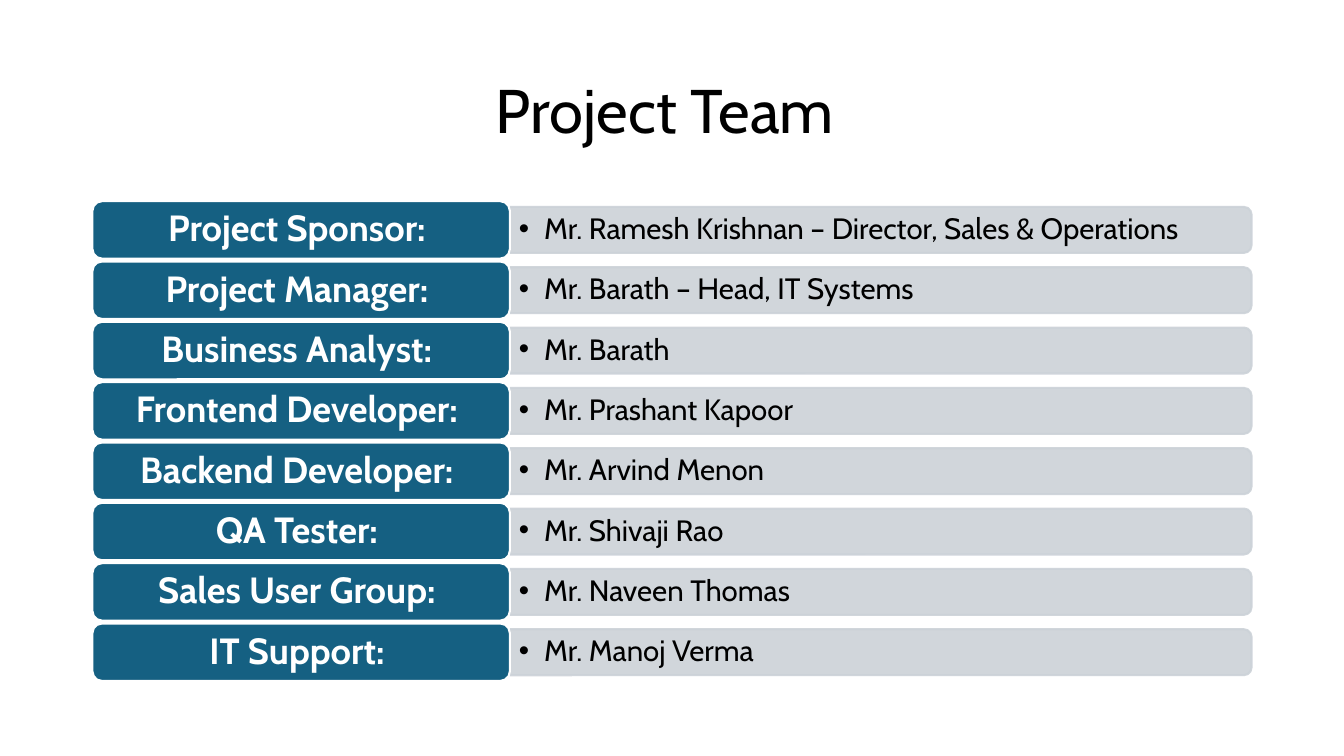
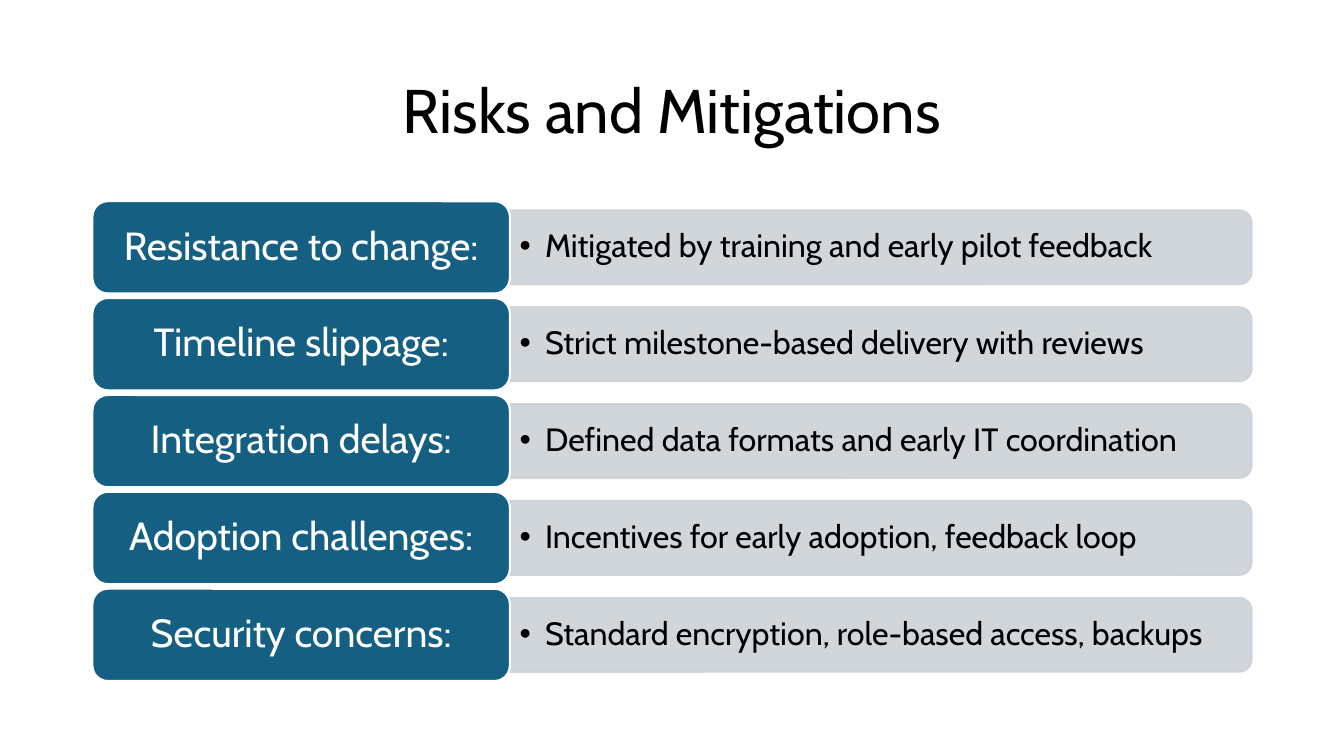
from lxml.etree import SubElement
from pptx import Presentation
from pptx.dml.color import RGBColor
from pptx.enum.shapes import MSO_SHAPE
from pptx.enum.text import MSO_ANCHOR, PP_ALIGN
from pptx.oxml.ns import qn
from pptx.util import Cm, Pt

FONT = "Cabin"
BLACK = RGBColor(0x00, 0x00, 0x00)
WHITE = RGBColor(0xFF, 0xFF, 0xFF)
TEAL = RGBColor(0x15, 0x60, 0x82)
GREY = RGBColor(0xCC, 0xD2, 0xD8)

# Shared layout, in centimetres
LEFT, TOP, WIDTH, HEIGHT = 2.33, 5.07, 29.21, 12.09
LABEL_WIDTH = 10.52
DETAIL_WIDTH = WIDTH - LABEL_WIDTH
GAP_RATIO = 0.05      # gap between rows, relative to the row height
DETAIL_RATIO = 0.8    # height of the detail bar, relative to the row height
INSET_PER_POINT = 0.0107

TEAM = [
    ("Project Sponsor: ", "Mr. Ramesh Krishnan – Director, Sales & Operations"),
    ("Project Manager: ", "Mr. Barath – Head, IT Systems"),
    ("Business Analyst: ", "Mr. Barath"),
    ("Frontend Developer: ", "Mr. Prashant Kapoor"),
    ("Backend Developer: ", "Mr. Arvind Menon"),
    ("QA Tester: ", "Mr. Shivaji Rao"),
    ("Sales User Group: ", "Mr. Naveen Thomas"),
    ("IT Support: ", "Mr. Manoj Verma"),
]
RISKS = [
    ("Resistance to change:", "Mitigated by training and early pilot feedback"),
    ("Timeline slippage:", "Strict milestone-based delivery with reviews"),
    ("Integration delays:", "Defined data formats and early IT coordination"),
    ("Adoption challenges:", "Incentives for early adoption, feedback loop"),
    ("Security concerns:", "Standard encryption, role-based access, backups"),
]


def write_text(frame, text, *, size, color=BLACK, bold=False,
               align=PP_ALIGN.CENTER, bullet=False):
    """Fill a text frame with one formatted, vertically centred paragraph."""
    frame.word_wrap = True
    frame.vertical_anchor = MSO_ANCHOR.MIDDLE
    inset = size * INSET_PER_POINT
    frame.margin_left = frame.margin_right = Cm(inset)
    frame.margin_top = frame.margin_bottom = Cm(inset / 2)
    paragraph = frame.paragraphs[0]
    paragraph.alignment = align
    paragraph.line_spacing = 0.9
    if bullet:
        properties = paragraph._p.get_or_add_pPr()
        properties.set("marL", str(Cm(0.64)))
        properties.set("indent", str(-Cm(0.64)))
        SubElement(properties, qn("a:buFont"), typeface="Arial")
        SubElement(properties, qn("a:buChar"), char="•")
    run = paragraph.add_run()
    run.text = text
    run.font.name = FONT
    run.font.size = Pt(size)
    run.font.bold = bold
    run.font.color.rgb = color


class Deck:
    """Holds the shared style and the current slide."""

    def __init__(self):
        self.presentation = Presentation()
        self.presentation.slide_width = Cm(33.87)
        self.presentation.slide_height = Cm(19.05)
        self.slide = None

    def add_slide(self, title):
        blank = self.presentation.slide_layouts[6]
        self.slide = self.presentation.slides.add_slide(blank)
        self.add_text(title, LEFT, 1.01, WIDTH, 3.68, size=44)

    def add_text(self, text, left, top, width, height, **style):
        box = self.slide.shapes.add_textbox(
            Cm(left), Cm(top), Cm(width), Cm(height))
        write_text(box.text_frame, text, **style)

    def add_block(self, preset, left, top, width, height, fill, line):
        block = self.slide.shapes.add_shape(
            preset, Cm(left), Cm(top), Cm(width), Cm(height))
        block.shadow.inherit = False
        block.fill.solid()
        block.fill.fore_color.rgb = fill
        block.line.color.rgb = line
        block.line.width = Pt(1.5)
        return block

    def add_label(self, text, top, height, **style):
        label = self.add_block(MSO_SHAPE.ROUNDED_RECTANGLE, LEFT, top,
                               LABEL_WIDTH, height, TEAL, WHITE)
        write_text(label.text_frame, text, color=WHITE, **style)

    def add_detail(self, text, top, height, size):
        # The bar is upright and turned, so that its right corners are round
        left = LEFT + LABEL_WIDTH
        bar = self.add_block(
            MSO_SHAPE.ROUND_2_SAME_RECTANGLE,
            left + (DETAIL_WIDTH - height) / 2,
            top + (height - DETAIL_WIDTH) / 2,
            height, DETAIL_WIDTH, GREY, GREY)
        bar.rotation = 90
        for color in bar._element.spPr.iter(qn("a:srgbClr")):
            SubElement(color, qn("a:alpha"), val="90000")
        self.add_text(text, left, top, DETAIL_WIDTH, height, size=size,
                      align=PP_ALIGN.LEFT, bullet=True)

    def add_rows(self, rows, label_size, detail_size, bold=False):
        count = len(rows)
        height = HEIGHT / (count + (count - 1) * GAP_RATIO)
        detail_height = height * DETAIL_RATIO
        for index, (label, detail) in enumerate(rows):
            top = TOP + index * height * (1 + GAP_RATIO)
            self.add_detail(detail, top + (height - detail_height) / 2,
                            detail_height, detail_size)
            self.add_label(label, top, height, size=label_size, bold=bold)


def main():
    deck = Deck()

    # Project team
    deck.add_slide("Project Team ")
    deck.add_rows(TEAM, label_size=26, detail_size=21, bold=True)

    # Risks and mitigations
    deck.add_slide("Risks and Mitigations")
    deck.add_rows(RISKS, label_size=28, detail_size=23)

    deck.presentation.save("out.pptx")


if __name__ == "__main__":
    main()
